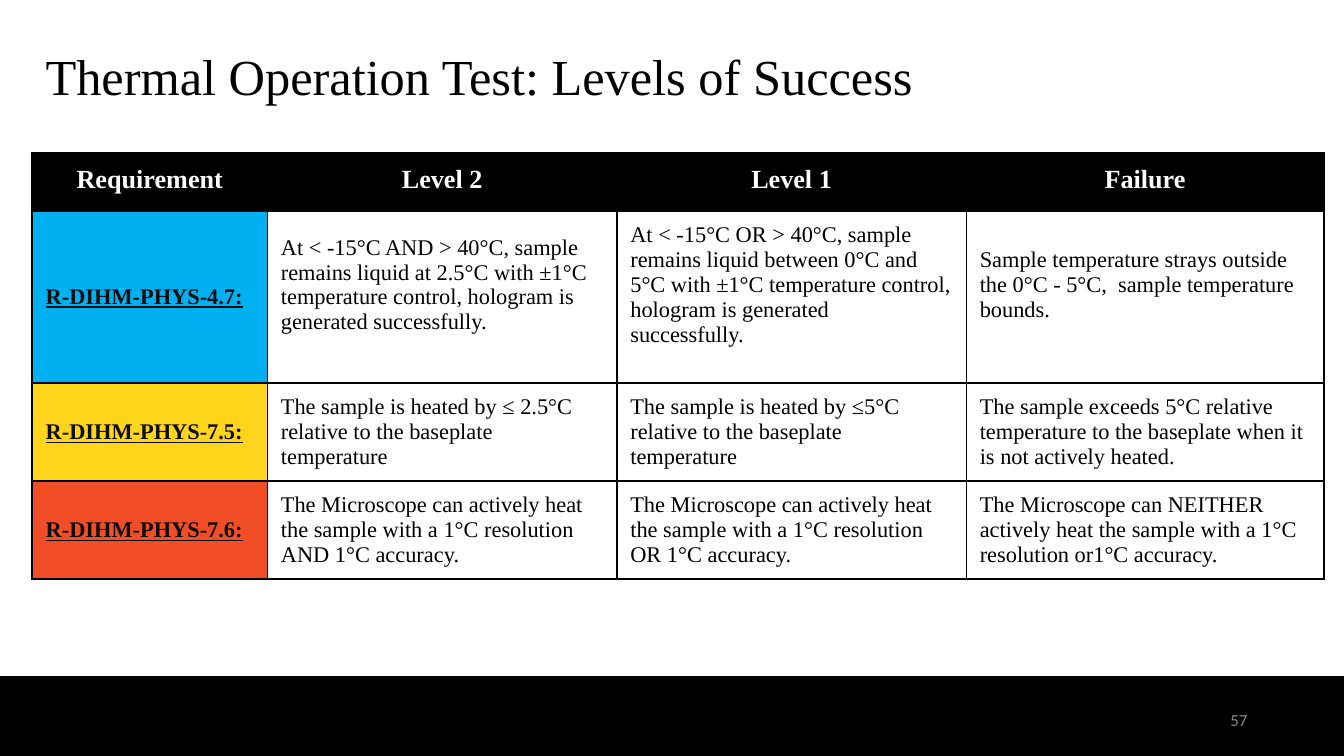
from dataclasses import dataclass

from lxml.etree import SubElement
from pptx import Presentation
from pptx.dml.color import RGBColor
from pptx.enum.shapes import MSO_SHAPE as Shape
from pptx.enum.text import MSO_ANCHOR as Anchor, PP_ALIGN as Align
from pptx.oxml.ns import qn
from pptx.util import Inches, Pt


@dataclass(frozen=True)
class Theme:
    black: str = "000000"
    white: str = "FFFFFF"
    ink: str = "0D0D0D"
    gray: str = "888888"
    blue: str = "00B0F0"
    gold: str = "FED41D"
    red: str = "F14E28"
    serif: str = "Times New Roman"
    sans: str = "Calibri"
    title: int = 27
    head: int = 14
    body: int = 12
    small: int = 9
    line: int = 1


THEME = Theme()
HARD = chr(160)
HEADS = ["Requirement", "Level 2", "Level 1", "Failure"]
WIDTHS = [1.75, 2.6, 2.6, 2.66]
HEIGHTS = [0.43, 1.21, 0.73, 0.73]
FILLS = [THEME.blue, THEME.gold, THEME.red]
PADS = [0.23, 0.05, 0.05]
ROWS = [
    [
        "R-DIHM-PHYS-4.7:",
        "At < -15°C AND > 40°C, sample remains liquid at 2.5°C with ±1°C temperature control, hologram is generated successfully.",
        "At < -15°C OR > 40°C, sample remains liquid between 0°C and 5°C with ±1°C temperature control, hologram is generated successfully.",
        "Sample temperature strays outside the 0°C - 5°C,  sample temperature bounds.",
    ],
    [
        "R-DIHM-PHYS-7.5:",
        "The sample is heated by ≤ 2.5°C relative to the baseplate temperature",
        "The sample is heated by ≤5°C relative to the baseplate temperature",
        "The sample exceeds 5°C relative temperature to the baseplate when it is not actively heated.",
    ],
    [
        "R-DIHM-PHYS-7.6:",
        "The Microscope can actively heat the sample with a 1°C resolution AND 1°C accuracy.",
        "The Microscope can actively heat the sample with a 1°C resolution OR 1°C accuracy.",
        "The Microscope can NEITHER actively heat the sample with a 1°C resolution or1°C accuracy.",
    ],
]


def paint(fill, color):
    fill.solid()
    fill.fore_color.rgb = RGBColor.from_string(color)


def write(frame, text, size=THEME.body, face=THEME.serif, color=THEME.black,
          bold=False, under=False, align=Align.LEFT, space=1.0):
    frame.word_wrap = True
    para = frame.paragraphs[0]
    para.alignment = align
    para.line_spacing = space
    run = para.add_run()
    run.text = text
    font = run.font
    font.size, font.name = Pt(size), face
    font.bold, font.underline = bold, under
    font.color.rgb = RGBColor.from_string(color)


def label(slide, box, text, anchor=Anchor.TOP, **style):
    frame = slide.shapes.add_textbox(*map(Inches, box)).text_frame
    frame.margin_left = frame.margin_right = Inches(0.1)
    frame.margin_top = frame.margin_bottom = Inches(0.1)
    frame.vertical_anchor = anchor
    write(frame, text, **style)


def border(cell):
    props = cell._tc.get_or_add_tcPr()
    for index, side in enumerate(("lnL", "lnR", "lnT", "lnB")):
        line = props.makeelement(qn(f"a:{side}"), {"w": str(Pt(THEME.line))})
        fill = SubElement(line, qn("a:solidFill"))
        SubElement(fill, qn("a:srgbClr"), val=THEME.black)
        props.insert(index, line)


def dress(cell, fill, pads):
    sides = map(Inches, pads)
    cell.margin_left, cell.margin_top, cell.margin_right, cell.margin_bottom = sides
    cell.vertical_anchor = Anchor.MIDDLE
    paint(cell.fill, fill)
    border(cell)


def footer(slide, box, number):
    left, top, width, height = box
    band = slide.shapes.add_shape(Shape.RECTANGLE, *map(Inches, box))
    band.shadow.inherit = False
    paint(band.fill, THEME.black)
    paint(band.line.fill, THEME.black)
    band.line.width = Pt(THEME.line)
    label(slide, (left + width - 1.22, top + 0.1, 0.6, 0.43), number,
          anchor=Anchor.MIDDLE, size=THEME.small, face=THEME.sans,
          color=THEME.gray, align=Align.RIGHT)


def matrix(slide, box):
    frame = slide.shapes.add_table(len(HEIGHTS), len(WIDTHS), *map(Inches, box))
    table = frame.table
    for col, width in zip(table.columns, WIDTHS):
        col.width = Inches(width)
    for row, height in zip(table.rows, HEIGHTS):
        row.height = Inches(height)
    for col, text in enumerate(HEADS):
        cell = table.cell(0, col)
        dress(cell, THEME.black, (0.01, 0.01, 0.01, 0.05))
        write(cell.text_frame, text, size=THEME.head, color=THEME.white,
              bold=True, align=Align.CENTER)
    for row, (texts, fill, pad) in enumerate(zip(ROWS, FILLS, PADS), 1):
        for col, text in enumerate(texts):
            key = col == 0
            cell = table.cell(row, col)
            dress(cell, fill if key else THEME.white,
                  (0.1, 0.05, 0.1, 0.05 if key else pad))
            write(cell.text_frame, text if key else text + HARD,
                  bold=key, under=key,
                  color=THEME.ink if key else THEME.black)


def main():
    deck = Presentation()
    deck.slide_width = Inches(10)
    deck.slide_height = deck.slide_width * 9 // 16
    slide = deck.slides.add_slide(deck.slide_layouts[6])
    paint(slide.background.fill, THEME.white)
    footer(slide, (0, 5.04, 10, 0.58), "57")
    label(slide, (0.24, 0.29, 9.32, 0.63),
          "Thermal Operation Test: Levels of Success",
          size=THEME.title, space=0.9)
    matrix(slide, (0.24, 1.14, sum(WIDTHS), sum(HEIGHTS)))
    deck.save("out.pptx")


if __name__ == "__main__":
    main()
